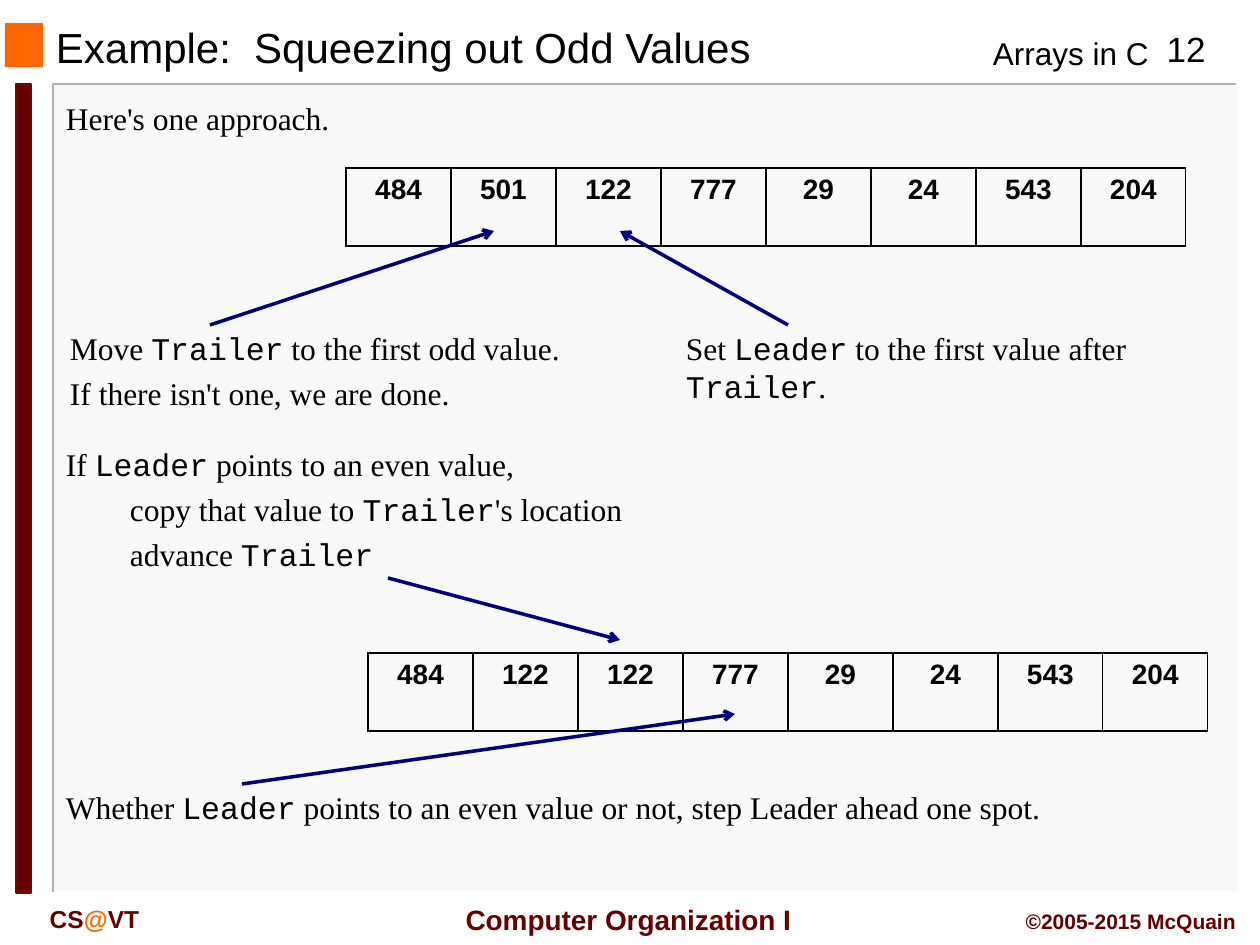
from dataclasses import dataclass
from typing import Any

from lxml.etree import SubElement
from pptx import Presentation
from pptx.dml.color import RGBColor
from pptx.enum.shapes import MSO_CONNECTOR, MSO_SHAPE
from pptx.enum.text import MSO_ANCHOR, PP_ALIGN
from pptx.oxml.ns import qn
from pptx.util import Emu, Pt

PX = 914400 / 126
BLACK = RGBColor(0x00, 0x00, 0x00)
WHITE = RGBColor(0xFF, 0xFF, 0xFF)
PANEL = RGBColor(0xF8, 0xF8, 0xF8)
EDGE = RGBColor(0xB2, 0xB2, 0xB2)
ORANGE = RGBColor(0xFF, 0x66, 0x00)
MAROON = RGBColor(0x66, 0x00, 0x00)
BAR_EDGE = RGBColor(0x80, 0x00, 0x00)
NAVY = RGBColor(0x00, 0x00, 0x80)

SERIF = {"name": "Times New Roman", "size": Pt(18), "color": BLACK}
CODE = SERIF | {"name": "Courier New"}
HEADING = {"name": "Arial", "size": Pt(24), "color": BLACK}
COURSE = HEADING | {"size": Pt(18)}
NUMBER = HEADING | {"size": Pt(20)}
FOOTER = {"name": "Arial", "size": Pt(14), "bold": True, "color": MAROON}
VALUE = FOOTER | {"size": Pt(16), "color": BLACK}

TIGHT = (3, 4)
LOOSE = (13, 6)
CELL_WIDTH, CELL_HEIGHT = 105, 78
STEP_INDENT = 64


@dataclass(frozen=True)
class Note:
    left: int
    top: int
    width: int
    height: int
    lines: tuple[str, ...]
    plain: dict[str, Any]
    marked: dict[str, Any]
    inset: tuple[int, int] = TIGHT
    align: PP_ALIGN = PP_ALIGN.LEFT
    anchor: MSO_ANCHOR = MSO_ANCHOR.TOP
    indented_from: int = 99


@dataclass(frozen=True)
class ValueRow:
    left: int
    top: int
    values: tuple[int, ...]


@dataclass(frozen=True)
class Pointer:
    start: tuple[int, int]
    end: tuple[int, int]


def px(length: int) -> Emu:
    return Emu(round(length * PX))


def apply(target: Any, values: dict[str, Any]) -> None:
    for attribute, value in values.items():
        setattr(target, attribute, value)


def add_run(paragraph: Any, text: str, style: dict[str, Any]) -> None:
    run = paragraph.add_run()
    run.text = text
    apply(run.font, {key: value for key, value in style.items() if key != "color"})
    run.font.color.rgb = style["color"]


def draw_block(slide: Any, box: tuple[int, int, int, int], fill: RGBColor,
               edge: RGBColor | None = None) -> None:
    block = slide.shapes.add_shape(MSO_SHAPE.RECTANGLE, *map(px, box))
    block.shadow.inherit = False
    block.fill.solid()
    block.fill.fore_color.rgb = fill
    if edge is None:
        block.line.fill.background()
    else:
        block.line.color.rgb = edge
        block.line.width = Pt(1)


def draw_corner(slide: Any, points: list[tuple[int, int]], color: RGBColor) -> None:
    builder = slide.shapes.build_freeform(*points[0], scale=PX)
    builder.add_line_segments(points[1:], close=False)
    corner = builder.convert_to_shape()
    corner.shadow.inherit = False
    corner.fill.background()
    corner.line.color.rgb = color
    corner.line.width = Pt(1)


def draw_note(slide: Any, note: Note) -> None:
    box = slide.shapes.add_textbox(*map(px, (note.left, note.top, note.width, note.height)))
    frame = box.text_frame
    side, end = map(px, note.inset)
    apply(frame, {"word_wrap": True, "vertical_anchor": note.anchor,
                  "margin_left": side, "margin_right": side,
                  "margin_top": end, "margin_bottom": end})
    for index, line in enumerate(note.lines):
        paragraph = frame.add_paragraph() if index else frame.paragraphs[0]
        paragraph.alignment = note.align
        if index:
            paragraph.space_before = Pt(4)
        if index >= note.indented_from:
            paragraph._p.get_or_add_pPr().set("marL", str(px(STEP_INDENT)))
        for part, text in enumerate(line.split("|")):
            if text:
                add_run(paragraph, text, note.marked if part % 2 else note.plain)


def draw_values(slide: Any, row: ValueRow) -> None:
    count = len(row.values)
    table = slide.shapes.add_table(1, count, px(row.left), px(row.top),
                                   px(CELL_WIDTH * count), px(CELL_HEIGHT)).table
    apply(table, {"first_row": False, "horz_banding": False})
    for cell, value in zip(table.rows[0].cells, row.values):
        paragraph = cell.text_frame.paragraphs[0]
        paragraph.alignment = PP_ALIGN.CENTER
        add_run(paragraph, str(value), VALUE)
        properties = cell._tc.get_or_add_tcPr()
        for side in ("a:lnL", "a:lnR", "a:lnT", "a:lnB"):
            border = SubElement(properties, qn(side), w=str(Pt(1)))
            ink = SubElement(border, qn("a:solidFill"))
            SubElement(ink, qn("a:srgbClr"), val=str(BLACK))
        cell.fill.background()


def draw_pointer(slide: Any, pointer: Pointer) -> None:
    arrow = slide.shapes.add_connector(MSO_CONNECTOR.STRAIGHT,
                                       *map(px, pointer.start + pointer.end))
    arrow.line.color.rgb = NAVY
    arrow.line.width = Pt(2)
    SubElement(arrow.line._get_or_add_ln(), qn("a:tailEnd"), type="arrow")
    SubElement(arrow._element.spPr, qn("a:effectLst"))


NOTES = (
    Note(980, 28, 190, 50, ("Arrays in C",), COURSE, COURSE, LOOSE),
    Note(1144, 21, 84, 55, ("12",), NUMBER, NUMBER, LOOSE, PP_ALIGN.CENTER),
    Note(445, 896, 367, 47, ("Computer Organization I",), FOOTER | {"size": Pt(16)},
         FOOTER, LOOSE, PP_ALIGN.CENTER, MSO_ANCHOR.MIDDLE),
    Note(0, 898, 189, 42, ("CS|@|VT",), FOOTER, FOOTER | {"color": ORANGE},
         LOOSE, PP_ALIGN.CENTER),
    Note(987, 903, 262, 38, ("©2005-2015 McQuain",), FOOTER | {"size": Pt(12)},
         FOOTER, LOOSE, PP_ALIGN.RIGHT),
    Note(53, 14, 914, 66, ("Example:  Squeezing out Odd Values",), HEADING, HEADING,
         anchor=MSO_ANCHOR.MIDDLE),
    Note(63, 95, 1166, 45, ("Here's one approach.",), SERIF, CODE),
    Note(63, 441, 582, 137,
         ("If |Leader| points to an even value,",
          "copy that value to |Trailer|'s location",
          "advance |Trailer|"), SERIF, CODE, indented_from=1),
    Note(67, 325, 525, 92,
         ("Move |Trailer| to the first odd value.",
          "If there isn't one, we are done."), SERIF, CODE),
    Note(683, 325, 525, 83,
         ("Set |Leader| to the first value after |Trailer|.",), SERIF, CODE),
    Note(63, 784, 1050, 45,
         ("Whether |Leader| points to an even value or not, step Leader ahead one spot.",),
         SERIF, CODE),
)
ROWS = (
    ValueRow(346, 168, (484, 501, 122, 777, 29, 24, 543, 204)),
    ValueRow(368, 653, (484, 122, 122, 777, 29, 24, 543, 204)),
)
POINTERS = (
    Pointer((210, 325), (494, 231)),
    Pointer((788, 325), (620, 231)),
    Pointer((388, 578), (620, 640)),
    Pointer((242, 784), (735, 714)),
)


def main() -> None:
    deck = Presentation()
    apply(deck, {"slide_width": px(1260), "slide_height": px(945)})
    slide = deck.slides.add_slide(deck.slide_layouts[6])
    draw_block(slide, (54, 84, 1184, 808), PANEL)
    draw_corner(slide, [(1236, 84), (53, 84), (53, 892)], EDGE)
    draw_corner(slide, [(1239, 84), (1239, 892), (55, 892)], WHITE)
    draw_block(slide, (5, 23, 38, 44), ORANGE)
    draw_block(slide, (16, 84, 15, 809), MAROON, BAR_EDGE)
    for note in NOTES:
        draw_note(slide, note)
    for row in ROWS:
        draw_values(slide, row)
    for pointer in POINTERS:
        draw_pointer(slide, pointer)
    deck.save("out.pptx")


if __name__ == "__main__":
    main()
